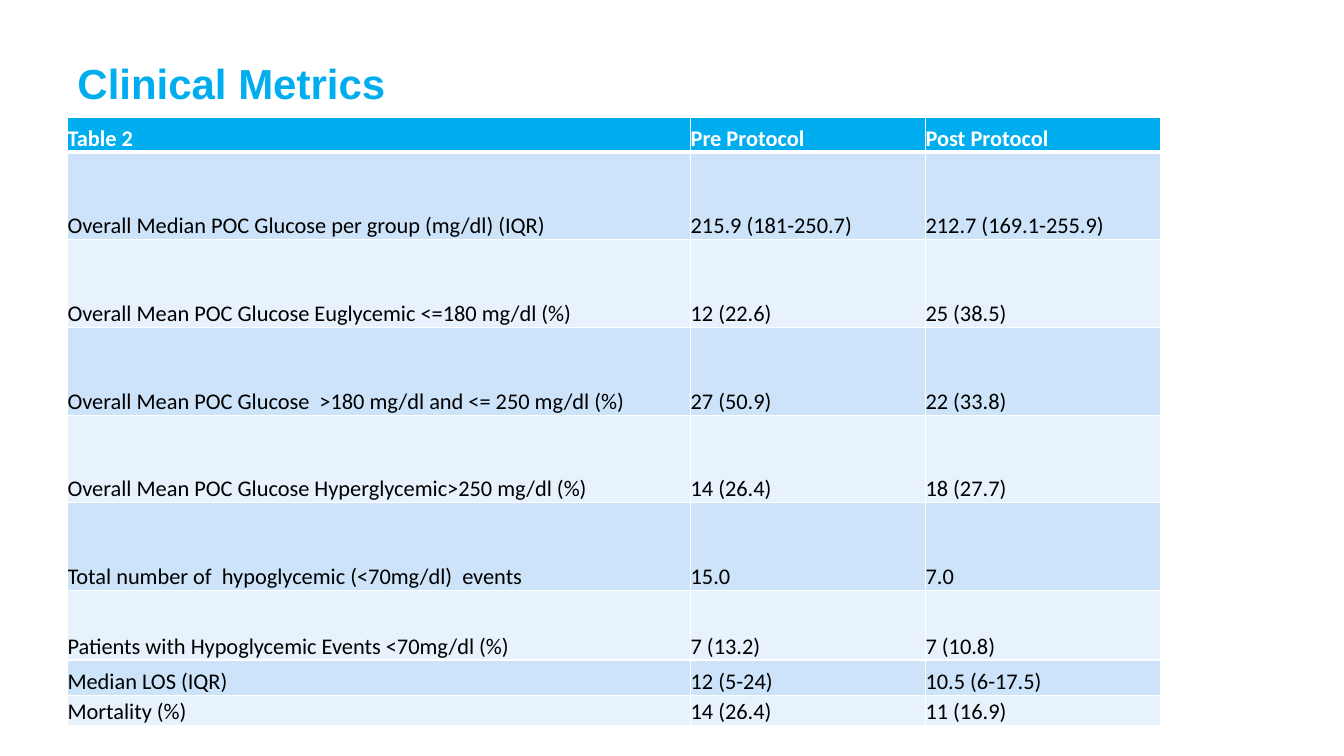
from dataclasses import dataclass

from lxml.etree import SubElement
from pptx import Presentation
from pptx.dml.color import RGBColor
from pptx.enum.text import MSO_ANCHOR as Anchor
from pptx.oxml.ns import qn
from pptx.util import Inches, Pt


@dataclass(frozen=True)
class Theme:
    accent: str = "00AEEF"
    white: str = "FFFFFF"
    black: str = "000000"
    bands: tuple = ("CCE3F9", "E7F2FC")
    title_font: str = "Arial"
    table_font: str = "Calibri"
    title_size: int = 30
    table_size: int = 16


THEME = Theme()

COL_WIDTHS = [6.18, 2.33, 2.33]
ROW_HEIGHTS = [0.35] + [0.87] * 5 + [0.69, 0.35, 0.3]
METRICS = [
    ("Table 2", "Pre Protocol", "Post Protocol"),
    ("Overall Median POC Glucose per group (mg/dl) (IQR)", "215.9 (181-250.7)", "212.7 (169.1-255.9)"),
    ("Overall Mean POC Glucose Euglycemic <=180 mg/dl (%)", "12 (22.6)", "25 (38.5)"),
    ("Overall Mean POC Glucose  >180 mg/dl and <= 250 mg/dl (%)", "27 (50.9)", "22 (33.8)"),
    ("Overall Mean POC Glucose Hyperglycemic>250 mg/dl (%)", "14 (26.4)", "18 (27.7)"),
    ("Total number of  hypoglycemic (<70mg/dl)  events", "15.0", "7.0"),
    ("Patients with Hypoglycemic Events <70mg/dl (%)", "7 (13.2)", "7 (10.8)"),
    ("Median LOS (IQR)", "12 (5-24)", "10.5 (6-17.5)"),
    ("Mortality (%)", "14 (26.4)", "11 (16.9)"),
]


def set_attrs(target, values):
    for name, value in values.items():
        setattr(target, name, value)


def write(tf, text, font, size, color, bold):
    r = tf.paragraphs[0].add_run()
    r.text = text
    set_attrs(r.font, {"name": font, "size": Pt(size), "bold": bold})
    r.font.color.rgb = RGBColor.from_string(color)


def add_title(s, text):
    tf = s.shapes.add_textbox(Inches(0.67), Inches(0.48), Inches(12), Inches(0.68)).text_frame
    set_attrs(tf, {"word_wrap": True, "vertical_anchor": Anchor.MIDDLE})
    write(tf, text, THEME.title_font, THEME.title_size, THEME.accent, True)


def add_borders(cell, widths):
    # Borders must come before the fill in the cell properties
    tc_pr = cell._tc.get_or_add_tcPr()
    for side, width in widths.items():
        ln = SubElement(tc_pr, qn(f"a:ln{side}"), w=str(Pt(width)))
        fill = SubElement(ln, qn("a:solidFill"))
        SubElement(fill, qn("a:srgbClr"), val=THEME.white)


def format_cell(cell, text, row):
    header = row == 0
    set_attrs(cell, {"margin_left": 0, "margin_right": 0, "margin_top": 0,
                     "margin_bottom": 0, "vertical_anchor": Anchor.BOTTOM})
    add_borders(cell, {"L": 1, "R": 1, "T": 3 if row == 1 else 1, "B": 3 if header else 1})
    cell.fill.solid()
    cell.fill.fore_color.rgb = RGBColor.from_string(
        THEME.accent if header else THEME.bands[(row - 1) % 2])
    write(cell.text_frame, text, THEME.table_font, THEME.table_size,
          THEME.white if header else THEME.black, header)


def add_metrics_table(s, rows):
    table = s.shapes.add_table(
        len(rows), len(COL_WIDTHS), Inches(0.67), Inches(1.16),
        Inches(sum(COL_WIDTHS)), Inches(sum(ROW_HEIGHTS))).table
    for col, width in zip(table.columns, COL_WIDTHS):
        col.width = Inches(width)
    for i, (values, height) in enumerate(zip(rows, ROW_HEIGHTS)):
        table.rows[i].height = Inches(height)
        for j, text in enumerate(values):
            format_cell(table.cell(i, j), text, i)


def main():
    prs = Presentation()
    set_attrs(prs, {"slide_width": Inches(13.33), "slide_height": Inches(7.5)})
    s = prs.slides.add_slide(prs.slide_layouts[6])

    # Heading
    add_title(s, "Clinical Metrics")

    # Results before and after the protocol
    add_metrics_table(s, METRICS)

    prs.save("out.pptx")


if __name__ == "__main__":
    main()
